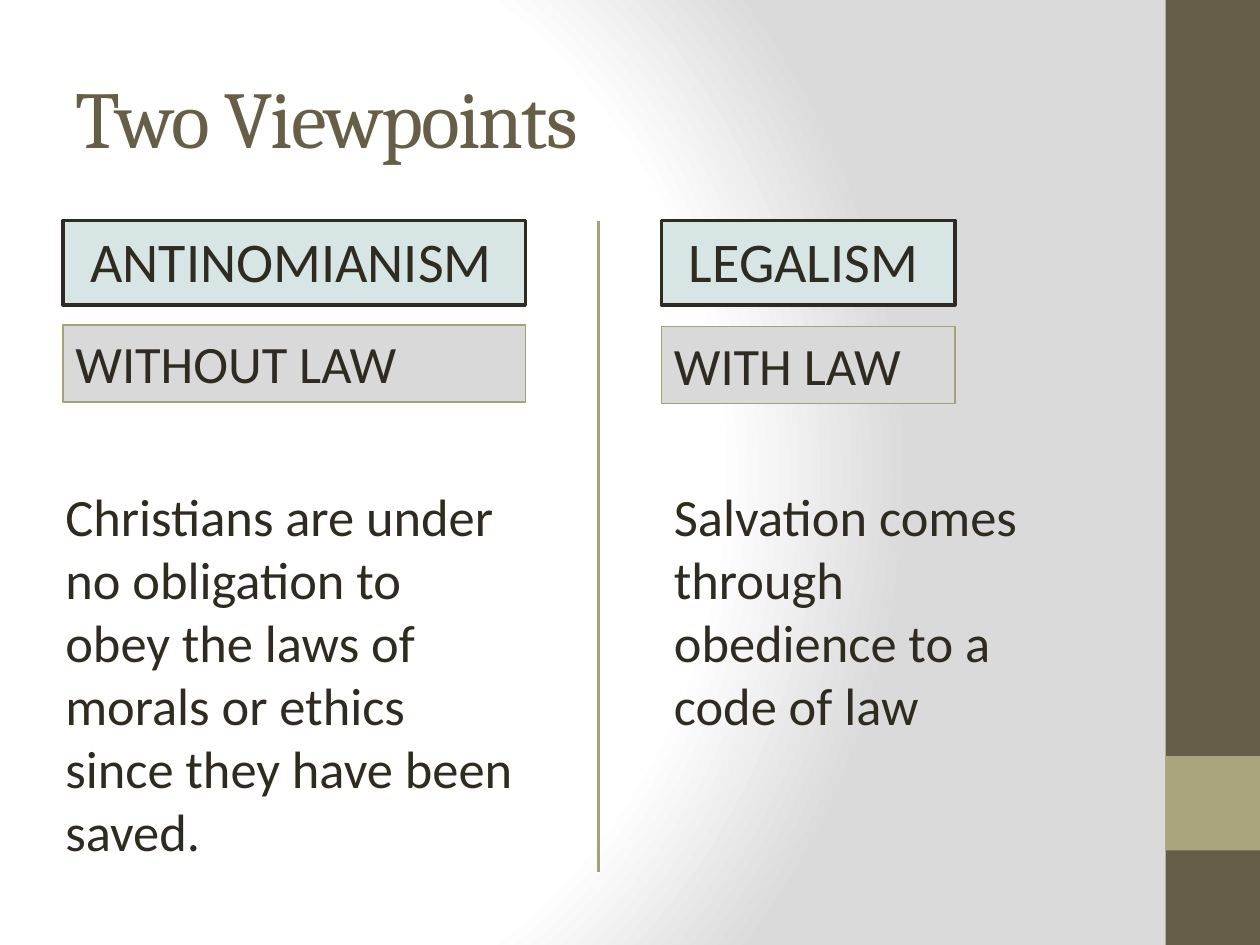
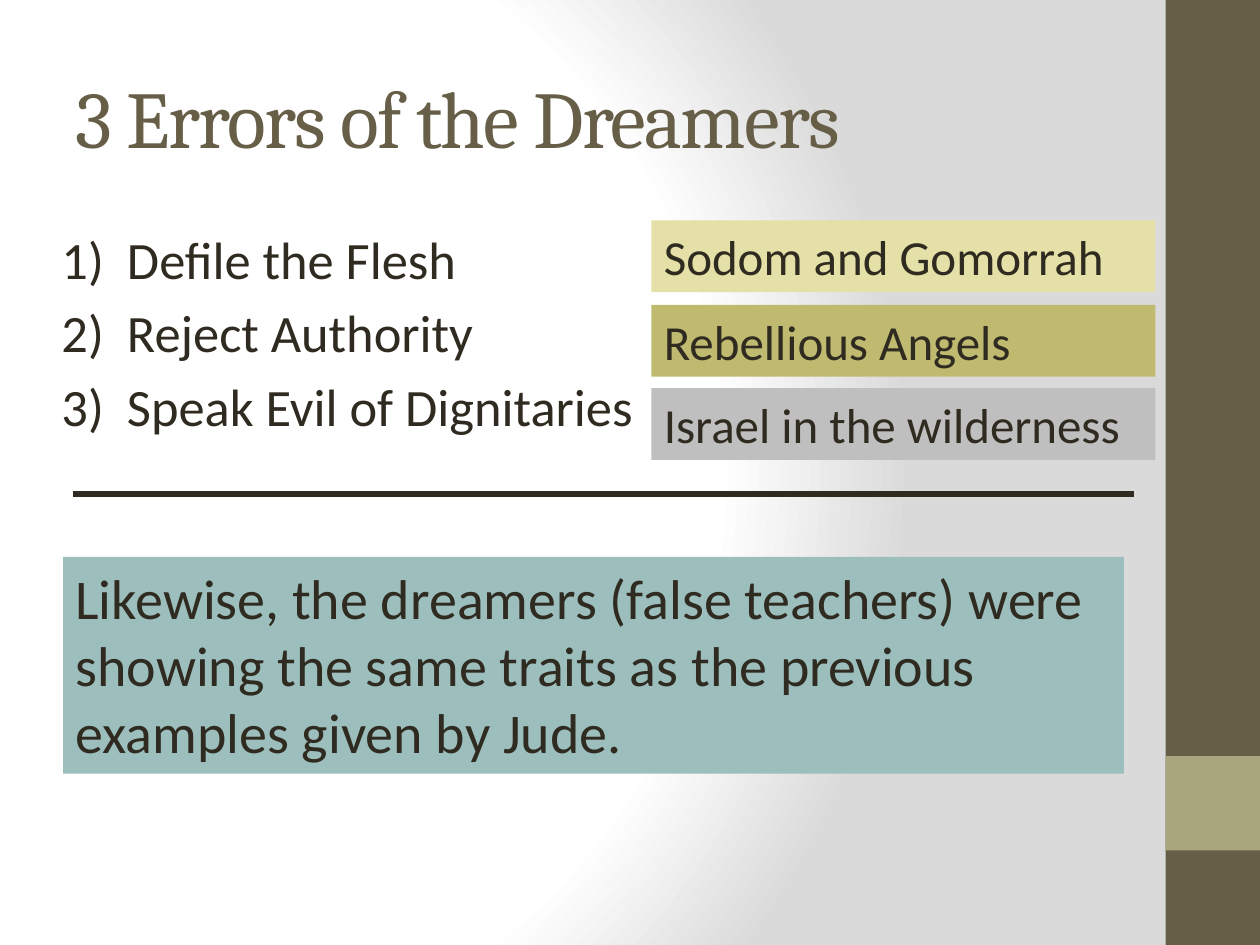
from dataclasses import dataclass
from typing import Optional

from lxml.etree import SubElement
from pptx import Presentation
from pptx.dml.color import RGBColor
from pptx.enum.shapes import MSO_CONNECTOR as Link, MSO_SHAPE as Form
from pptx.enum.text import MSO_ANCHOR as Anchor, PP_ALIGN as Align
from pptx.oxml import parse_xml
from pptx.oxml.ns import nsdecls, qn
from pptx.util import Inches, Pt

# Shared colours and fonts
INK = RGBColor(0x2F, 0x2B, 0x20)
BROWN = RGBColor(0x67, 0x5E, 0x47)
OLIVE = RGBColor(0xA9, 0xA5, 0x7C)
MOSS = RGBColor(0xA6, 0xA2, 0x78)
MIST = RGBColor(0xD7, 0xE5, 0xE5)
PALE = RGBColor(0xD9, 0xD9, 0xD9)
GRAY = RGBColor(0xBF, 0xBF, 0xBF)
GOLD = RGBColor(0xC0, 0xBA, 0x71)
CREAM = RGBColor(0xE4, 0xE0, 0xA7)
TEAL = RGBColor(0x9C, 0xBE, 0xBD)
HEAD_FONT = "Cambria"
BODY_FONT = "Calibri"

TOP = 1.75  # where the content starts on both slides

BACKDROP = f"""<a:gradFill {nsdecls('a')} rotWithShape="1">
  <a:gsLst>
    <a:gs pos="0"><a:srgbClr val="FFFFFF"/></a:gs>
    <a:gs pos="75000"><a:srgbClr val="FFFFFF"/></a:gs>
    <a:gs pos="100000"><a:srgbClr val="DADADA"/></a:gs>
  </a:gsLst>
  <a:path path="circle">
    <a:fillToRect l="20000" t="50000" r="100000" b="50000"/>
  </a:path>
</a:gradFill>"""


@dataclass
class Box:
    left: float
    top: float
    width: float
    height: float
    text: str = ""
    size: float = 30
    fill: Optional[RGBColor] = None
    line: Optional[RGBColor] = None
    weight: float = 0.75
    indent: float = 0


@dataclass
class Rule:
    x1: float
    y1: float
    x2: float
    y2: float
    color: RGBColor
    weight: float


@dataclass
class View:
    left: float
    width: float
    name: str
    motto: str
    motto_top: float
    claim: Box


BANDS = [
    Box(9.25, 0, 0.75, 7.5, fill=BROWN),
    Box(9.25, 6, 0.75, 0.75, fill=OLIVE),
]


def set_font(para, name: str, size: float, color: RGBColor) -> None:
    for run in para.runs:
        run.font.name = name
        run.font.size = Pt(size)
        run.font.color.rgb = color


def draw_box(slide, box: Box):
    place = [Inches(n) for n in (box.left, box.top, box.width, box.height)]
    if box.fill is None:
        shape = slide.shapes.add_textbox(*place)
    else:
        shape = slide.shapes.add_shape(Form.RECTANGLE, *place)
        shape.shadow.inherit = False
        shape.fill.solid()
        shape.fill.fore_color.rgb = box.fill
        if box.line is None:
            shape.line.fill.background()
        else:
            shape.line.color.rgb = box.line
            shape.line.width = Pt(box.weight)
    if box.text:
        frame = shape.text_frame
        frame.word_wrap = True
        frame.vertical_anchor = Anchor.TOP
        frame.text = box.text
        for para in frame.paragraphs:
            para.alignment = Align.LEFT
            set_font(para, BODY_FONT, box.size, INK)
            if box.indent:
                para._p.get_or_add_pPr().set("marL", str(Inches(box.indent)))
    return shape


def draw_rule(slide, rule: Rule) -> None:
    ends = [Inches(n) for n in (rule.x1, rule.y1, rule.x2, rule.y2)]
    line = slide.shapes.add_connector(Link.STRAIGHT, *ends)
    line.line.color.rgb = rule.color
    line.line.width = Pt(rule.weight)
    SubElement(line._element.spPr, qn("a:effectLst"))


def draw_list(slide, box: Box) -> None:
    """Draw the lines of the box as a numbered list."""
    for para in draw_box(slide, box).text_frame.paragraphs:
        para.space_after = Pt(6)
        props = para._p.get_or_add_pPr()
        props.set("marL", str(Inches(0.66)))
        props.set("indent", str(Inches(-0.52)))
        SubElement(props, qn("a:buFont"), typeface=BODY_FONT)
        SubElement(props, qn("a:buAutoNum"), type="arabicParenR")


def set_back(deck) -> None:
    master = deck.slide_master
    master.background.fill.gradient()
    old = master.element.xpath(".//p:bgPr/a:gradFill")[0]
    old.getparent().replace(old, parse_xml(BACKDROP))


def add_slide(deck, text: str):
    slide = deck.slides.add_slide(deck.slide_layouts[5])
    title = slide.shapes.title
    title.left, title.top = Inches(0.5), Inches(0.3)
    title.width, title.height = Inches(8.33), Inches(1.25)
    frame = title.text_frame
    frame.text = text
    frame.vertical_anchor = Anchor.MIDDLE
    para = frame.paragraphs[0]
    para.alignment = Align.LEFT
    set_font(para, HEAD_FONT, 46, BROWN)
    para.runs[0].font._element.set("spc", "-100")
    for band in BANDS:
        draw_box(slide, band)
    return slide


def add_views(deck) -> None:
    slide = add_slide(deck, "Two Viewpoints")
    views = [
        View(0.5, 3.67, "ANTINOMIANISM", "WITHOUT LAW", 2.58,
             Box(0.42, 3.79, 3.75, 3.13,
                 "Christians are under no obligation to obey the laws of "
                 "morals or ethics since they have been saved.")),
        View(5.25, 2.33, "LEGALISM", "WITH LAW", 2.59,
             Box(5.25, 3.79, 3.17, 2.12,
                 "Salvation comes through obedience to a code of law")),
    ]
    for view in views:
        draw_box(slide, Box(view.left, TOP, view.width, 0.67, view.name, 32,
                            MIST, INK, 2, indent=0.12))
        draw_box(slide, Box(view.left, view.motto_top, view.width, 0.61,
                            view.motto, fill=PALE, line=MOSS))
        draw_box(slide, view.claim)
    draw_rule(slide, Rule(4.75, TOP, 4.75, 6.92, MOSS, 2.25))


def add_errors(deck) -> None:
    slide = add_slide(deck, "3 Errors of the Dreamers")
    errors = ["Defile the Flesh", "Reject Authority",
              "Speak Evil of Dignitaries"]
    draw_list(slide, Box(0.25, TOP, 8.33, 5.25, "\n".join(errors)))

    # One past example beside each error
    cases = [("Sodom and Gomorrah", CREAM), ("Rebellious Angels", GOLD),
             ("Israel in the wilderness", GRAY)]
    for row, (text, fill) in enumerate(cases):
        top = round(TOP + row * 2 / 3, 2)
        draw_box(slide, Box(5.17, top, 4, 0.57, text, 28, fill))

    # Conclusion below the rule
    draw_rule(slide, Rule(0.58, 3.92, 9, 3.92, INK, 3.75))
    draw_box(slide, Box(0.5, 4.42, 8.42, 1.72,
                        "Likewise, the dreamers (false teachers) were showing "
                        "the same traits as the previous examples given by "
                        "Jude.", 32, TEAL))


def main() -> None:
    deck = Presentation()
    deck.slide_width, deck.slide_height = Inches(10), Inches(7.5)
    set_back(deck)
    add_views(deck)
    add_errors(deck)
    deck.save("out.pptx")


if __name__ == "__main__":
    main()
